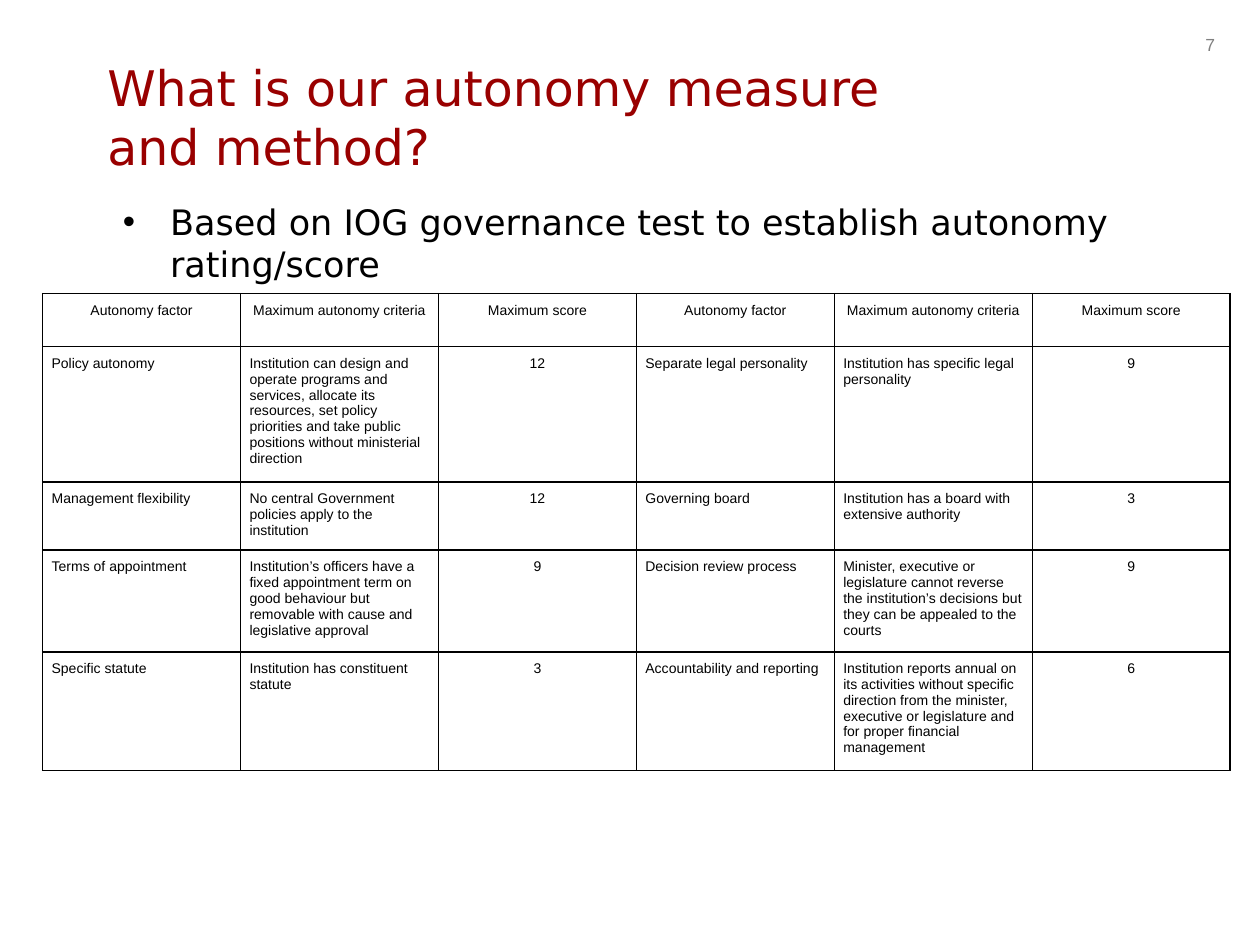
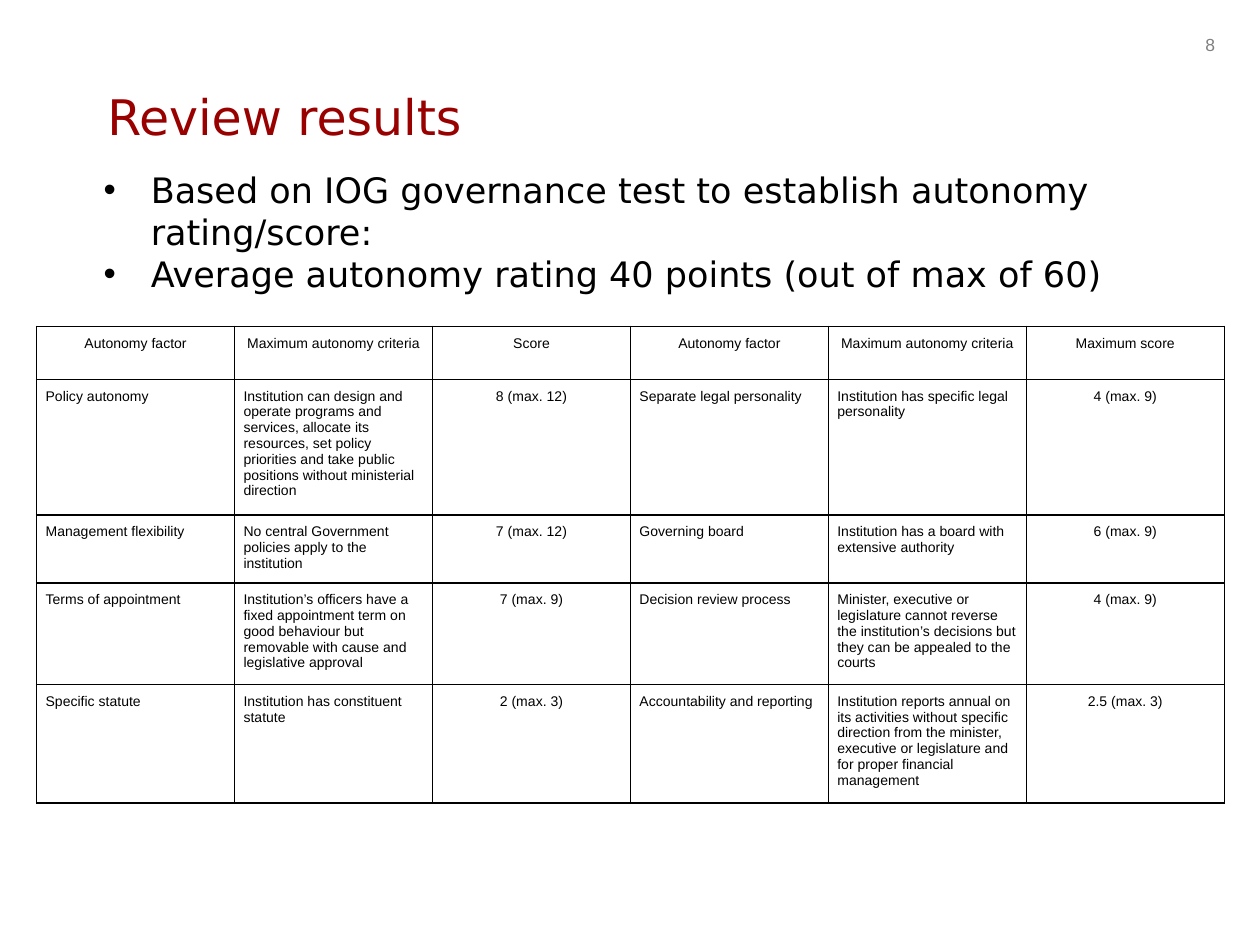
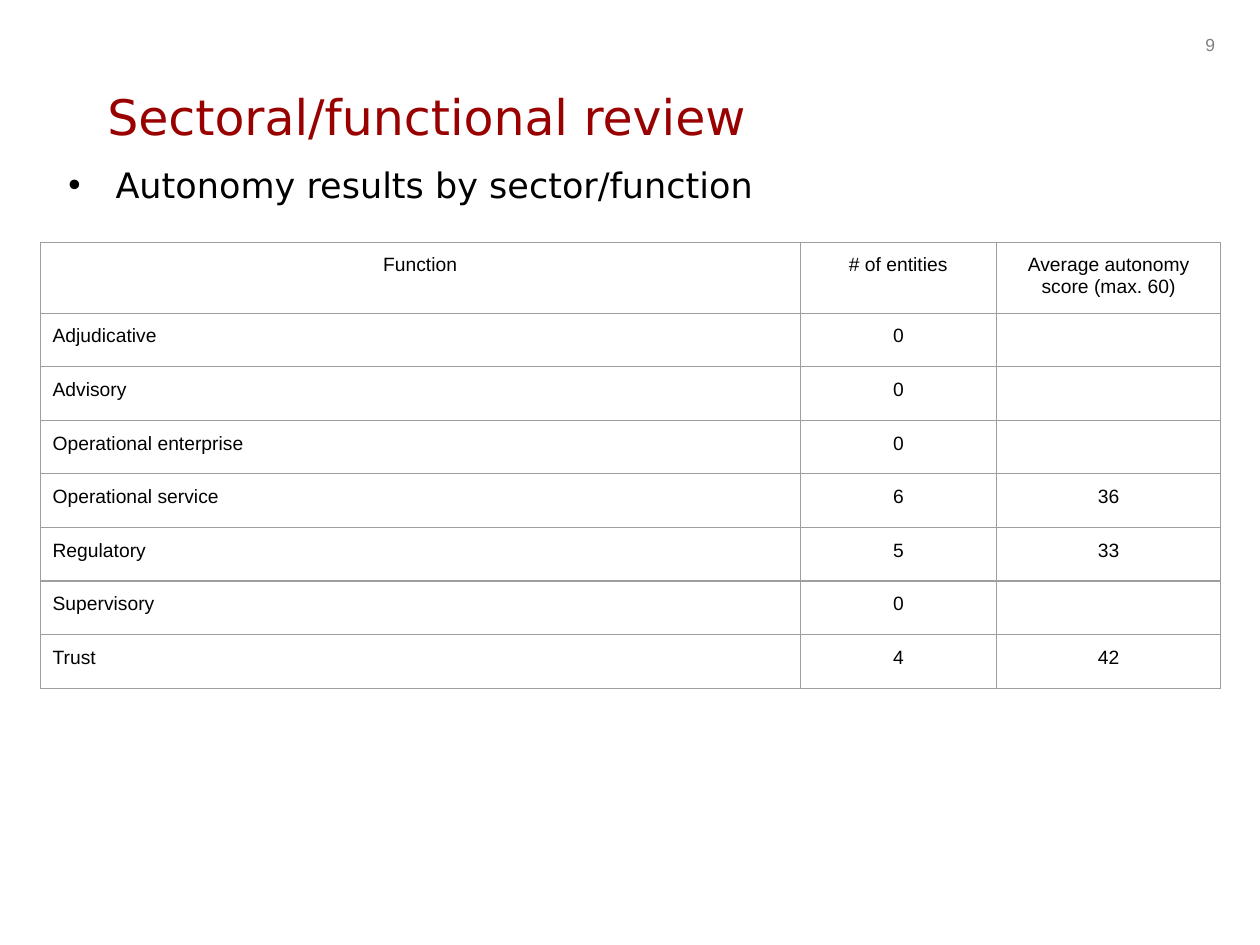
from dataclasses import dataclass
from typing import Any

from lxml import etree
from pptx import Presentation
from pptx import util as u
from pptx.dml.color import RGBColor
from pptx.enum import text as t
from pptx.oxml import ns

BLACK, RED, GREY, SILVER = "000000", "990000", "808080", "9E9E9E"
SANS, ARIAL = "DejaVu Sans", "Arial"
TITLE_BOX = (1.91, 1.07, 18.21, 2.54)
PAGE_BOX = (24.05, 0.56, 1.19, 0.69)
FIRST_PAGE = 7

FACTORS = [
    ("Policy autonomy", "Institution can design and operate programs and services, "
     "allocate its resources, set policy priorities and take public positions "
     "without ministerial direction"),
    ("Management flexibility", "No central Government policies apply to the institution"),
    ("Terms of appointment", "Institution’s officers have a fixed appointment term on "
     "good behaviour but removable with cause and legislative approval"),
    ("Specific statute", "Institution has constituent statute"),
    ("Separate legal personality", "Institution has specific legal personality"),
    ("Governing board", "Institution has a board with extensive authority"),
    ("Decision review process", "Minister, executive or legislature cannot reverse the "
     "institution’s decisions but they can be appealed to the courts"),
    ("Accountability and reporting", "Institution reports annual on its activities without "
     "specific direction from the minister, executive or legislature and for proper "
     "financial management"),
]


@dataclass
class Style:
    """Look of a table; lengths in cm, sizes and line widths in points."""
    cols: list[float]
    head: float
    row: float
    pad: float
    size: float
    line: str
    width: float


@dataclass
class Grid:
    left: float
    top: float
    rows: list[tuple[str, ...]]
    style: Style


@dataclass
class Page:
    title: str
    box: tuple[float, ...]
    points: list[str]
    grid: Grid


SCORES = Style([3.99] * 6, 1.07, 1.07, 0.18, 8, BLACK, 1)
SECTORS = Style([15.32, 3.96, 4.52], 1.4, 1.08, 0.25, 11, SILVER, 0.75)


def score_rows(heads: tuple[str, str], scores: list[str]) -> list[tuple[str, ...]]:
    """Set the factors in two halves side by side, under a heading row."""
    full = [(*pair, score) for pair, score in zip(FACTORS, scores)]
    half = len(full) // 2
    top = [("Autonomy factor", "Maximum autonomy criteria", head) for head in heads]
    return [a + b for a, b in zip(top[:1] + full[:half], top[1:] + full[half:])]


PAGES = [
    Page("What is our autonomy measure and method?", (1.91, 3.91, 21.59, 10.8),
         ["Based on IOG governance test to establish autonomy rating/score"],
         Grid(0.86, 5.92, score_rows(
             ("Maximum score", "Maximum score"),
             ["12", "12", "9", "3", "9", "3", "9", "6"]), SCORES)),
    Page("Review results", (1.52, 3.28, 21.97, 11.73),
         ["Based on IOG governance test to establish autonomy rating/score:",
          "Average autonomy rating 40 points (out of max of 60)"],
         Grid(0.74, 6.58, score_rows(
             ("Score", "Maximum score"),
             ["8 (max. 12)", "7 (max. 12)", "7 (max. 9)", "2 (max. 3)",
              "4 (max. 9)", "6 (max. 9)", "4 (max. 9)", "2.5 (max. 3)"]), SCORES)),
    Page("Sectoral/functional review", (0.81, 3.18, 22.68, 11.86),
         ["Autonomy results by sector/function"],
         Grid(0.81, 4.88, [
             ("Function", "# of entities", "Average autonomy score (max. 60)"),
             ("Adjudicative", "0", ""),
             ("Advisory", "0", ""),
             ("Operational enterprise", "0", ""),
             ("Operational service", "6", "36"),
             ("Regulatory", "5", "33"),
             ("Supervisory", "0", ""),
             ("Trust", "4", "42")], SECTORS)),
]


def put(item: Any, values: dict[str, Any]) -> None:
    for key, value in values.items():
        setattr(item, key, value)


def cm(box: tuple[float, ...]) -> list[u.Length]:
    return [u.Cm(n) for n in box]


def ink(para: Any, name: str, size: float, tint: str) -> None:
    for run in para.runs:
        put(run.font, {"name": name, "size": u.Pt(size)})
        run.font.color.rgb = RGBColor.from_string(tint)


def add(node: Any, tag: str, **attrs: str) -> Any:
    return etree.SubElement(node, ns.qn(tag), attrs)


def frame(slide: Any, box: tuple[float, ...]) -> Any:
    body = slide.shapes.add_textbox(*cm(box)).text_frame
    body.word_wrap = True
    return body


def draw_title(slide: Any, words: str) -> None:
    title = slide.shapes.title
    put(title, dict(zip(("left", "top", "width", "height"), cm(TITLE_BOX))))
    body = title.text_frame
    body.text = words
    put(body, {"word_wrap": True, "auto_size": t.MSO_AUTO_SIZE.NONE,
               "vertical_anchor": t.MSO_ANCHOR.MIDDLE})
    para = body.paragraphs[0]
    para.alignment = t.PP_ALIGN.LEFT
    ink(para, SANS, 28, RED)


def draw_points(slide: Any, page: Page) -> None:
    body = frame(slide, page.box)
    body.text = "\n".join(page.points)
    for para in body.paragraphs:
        props = para._p.get_or_add_pPr()
        props.set("marL", str(u.Cm(1.27)))
        props.set("indent", str(u.Cm(-0.95)))
        add(add(props, "a:buClr"), "a:srgbClr", val=BLACK)
        add(props, "a:buFont", typeface=ARIAL)
        add(props, "a:buChar", char="•")
        ink(para, SANS, 20, BLACK)


def draw_cell(cell: Any, words: str, head: bool, style: Style) -> None:
    props = cell._tc.get_or_add_tcPr()
    for side in "LRTB":
        line = add(props, f"a:ln{side}", w=str(u.Pt(style.width)))
        add(add(line, "a:solidFill"), "a:srgbClr", val=style.line)
    cell.fill.background()
    if not words:
        return
    cell.text = words
    put(cell, {f"margin_{side}": u.Cm(style.pad)
               for side in ("left", "right", "top", "bottom")})
    para = cell.text_frame.paragraphs[0]
    if head or words[0].isdigit():
        para.alignment = t.PP_ALIGN.CENTER
    ink(para, ARIAL, style.size, BLACK)


def draw_grid(slide: Any, grid: Grid) -> None:
    style = grid.style
    highs = [style.head] + [style.row] * (len(grid.rows) - 1)
    box = (grid.left, grid.top, sum(style.cols), sum(highs))
    table = slide.shapes.add_table(len(highs), len(style.cols), *cm(box)).table
    put(table, {"first_row": False, "horz_banding": False})
    for col, width in zip(table.columns, style.cols):
        col.width = u.Cm(width)
    for i, (row, high) in enumerate(zip(table.rows, highs)):
        row.height = u.Cm(high)
        for cell, words in zip(row.cells, grid.rows[i]):
            draw_cell(cell, words, i == 0, style)


def main() -> None:
    deck = Presentation()
    put(deck, {"slide_width": u.Cm(25.4), "slide_height": u.Cm(19.05)})
    for number, page in enumerate(PAGES, FIRST_PAGE):
        slide = deck.slides.add_slide(deck.slide_layouts.get_by_name("Title Only"))
        corner = frame(slide, PAGE_BOX)
        corner.text = str(number)
        ink(corner.paragraphs[0], ARIAL, 10, GREY)
        draw_title(slide, page.title)
        draw_points(slide, page)
        draw_grid(slide, page.grid)
    deck.save("out.pptx")


if __name__ == "__main__":
    main()
